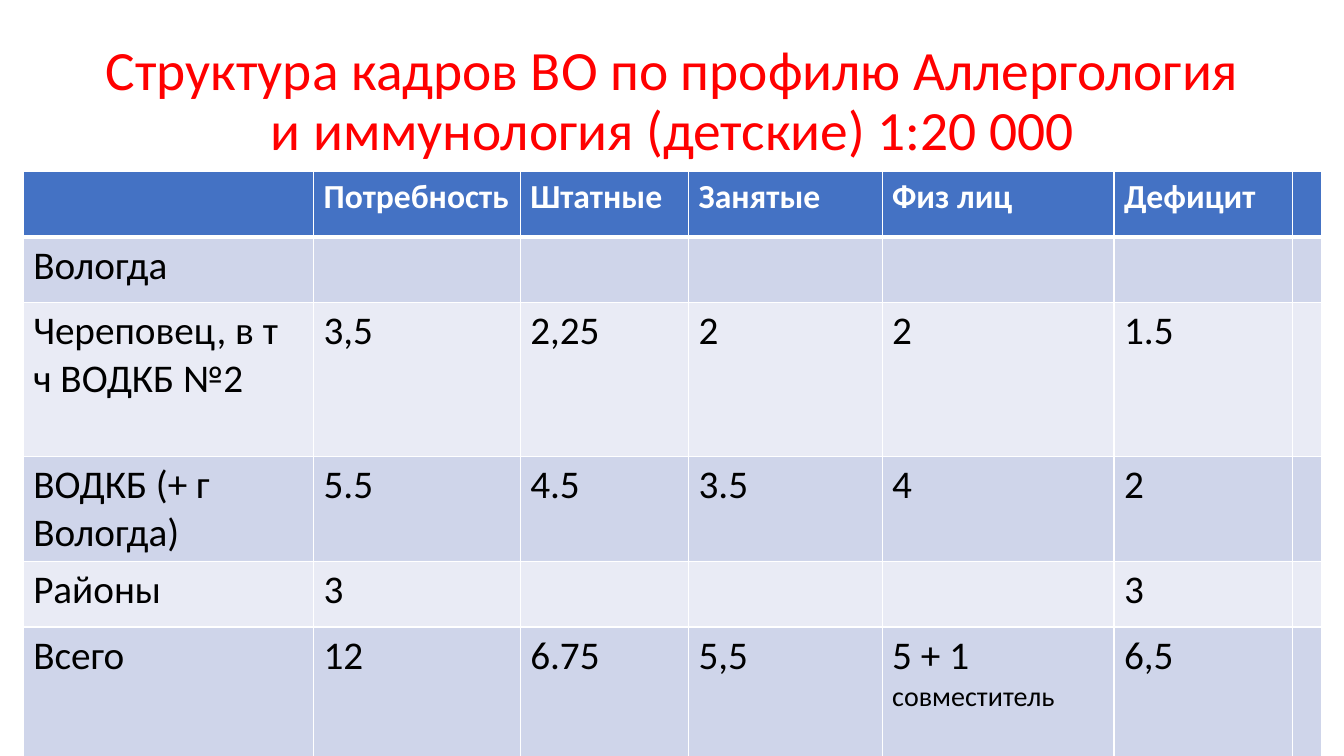
from dataclasses import dataclass

from pptx import Presentation
from pptx import util as u
from pptx.dml.color import RGBColor
from pptx.enum import text
from pptx.oxml.ns import qn
from lxml import etree


@dataclass(frozen=True)
class Theme:
    font: str = "Calibri"
    title: str = "FF0000"
    header: str = "4472C4"
    header_text: str = "FFFFFF"
    body_text: str = "000000"
    bands: tuple = ("CFD5EA", "E9EBF5")
    border: str = "FFFFFF"
    title_size: float = 39.6
    header_size: int = 24
    body_size: int = 28
    note_size: int = 20


THEME = Theme()
WIDTH, HEIGHT = 13.33, 7.5
TITLE = "Структура кадров ВО по профилю Аллергология и иммунология (детские) 1:20 000"

# Table grid in inches
TABLE_LEFT, TABLE_TOP = 0.23, 1.7
COLUMNS = (2.88, 2.05, 1.67, 1.92, 2.3, 1.77, 0.29)
ROWS = (0.65, 0.65, 1.53, 1.04, 0.65, 1.56)

# A tuple in a cell is a value followed by a smaller note
STAFF = (
    ("", "Потребность", "Штатные", "Занятые", "Физ лиц", "Дефицит", ""),
    ("Вологда", "", "", "", "", "", ""),
    ("Череповец, в т ч ВОДКБ №2", "3,5", "2,25", "2", "2", "1.5", ""),
    ("ВОДКБ (+ г Вологда)", "5.5", "4.5", "3.5", "4", "2", ""),
    ("Районы", "3", "", "", "", "3", ""),
    ("Всего", "12", "6.75", "5,5", ("5 + 1 ", "совместитель"), "6,5", ""),
)


def apply(target, values):
    for name, value in values.items():
        setattr(target, name, value)


def add_run(paragraph, wording, size, color, bold=False):
    run = paragraph.add_run()
    run.text = wording
    apply(run.font, {"name": THEME.font, "size": u.Pt(size), "bold": bold})
    run.font.color.rgb = RGBColor.from_string(color)


def add_title(slide):
    box = slide.shapes.add_textbox(
        u.Inches(0.92), u.Inches(0.18), u.Inches(11.5), u.Inches(1.67))
    frame = box.text_frame
    apply(frame, {"word_wrap": True, "vertical_anchor": text.MSO_ANCHOR.MIDDLE})
    paragraph = frame.paragraphs[0]
    apply(paragraph, {"alignment": text.PP_ALIGN.CENTER, "line_spacing": 0.9})
    add_run(paragraph, TITLE, THEME.title_size, THEME.title)


def add_border(cell, side, points):
    properties = cell._tc.get_or_add_tcPr()
    line = etree.SubElement(properties, qn(f"a:ln{side}"), w=str(u.Pt(points)))
    fill = etree.SubElement(line, qn("a:solidFill"))
    etree.SubElement(fill, qn("a:srgbClr"), val=THEME.border)


def format_cell(cell, content, row):
    header = row == 0
    # Borders: a thick rule divides the header from the body
    thick = {0: "B", 1: "T"}.get(row)
    for side in "LRTB":
        add_border(cell, side, 3 if side == thick else 1)
    cell.fill.solid()
    fill = THEME.header if header else THEME.bands[(row - 1) % 2]
    cell.fill.fore_color.rgb = RGBColor.from_string(fill)

    # Value and optional note
    parts = content if isinstance(content, tuple) else (content,)
    size = THEME.header_size if header else THEME.body_size
    color = THEME.header_text if header else THEME.body_text
    for wording, part_size in zip(parts, (size, THEME.note_size)):
        if wording:
            add_run(cell.text_frame.paragraphs[0], wording, part_size, color, header)


def add_staff_table(slide):
    table = slide.shapes.add_table(
        len(ROWS), len(COLUMNS), u.Inches(TABLE_LEFT), u.Inches(TABLE_TOP),
        u.Inches(sum(COLUMNS)), u.Inches(sum(ROWS))).table
    for column, width in zip(table.columns, COLUMNS):
        column.width = u.Inches(width)
    for row, height in zip(table.rows, ROWS):
        row.height = u.Inches(height)
    for row, contents in enumerate(STAFF):
        for column, content in enumerate(contents):
            format_cell(table.cell(row, column), content, row)


def main():
    presentation = Presentation()
    apply(presentation, {"slide_width": u.Inches(WIDTH),
                         "slide_height": u.Inches(HEIGHT)})
    slide = presentation.slides.add_slide(presentation.slide_layouts[6])
    add_title(slide)
    add_staff_table(slide)
    presentation.save("out.pptx")


if __name__ == "__main__":
    main()
